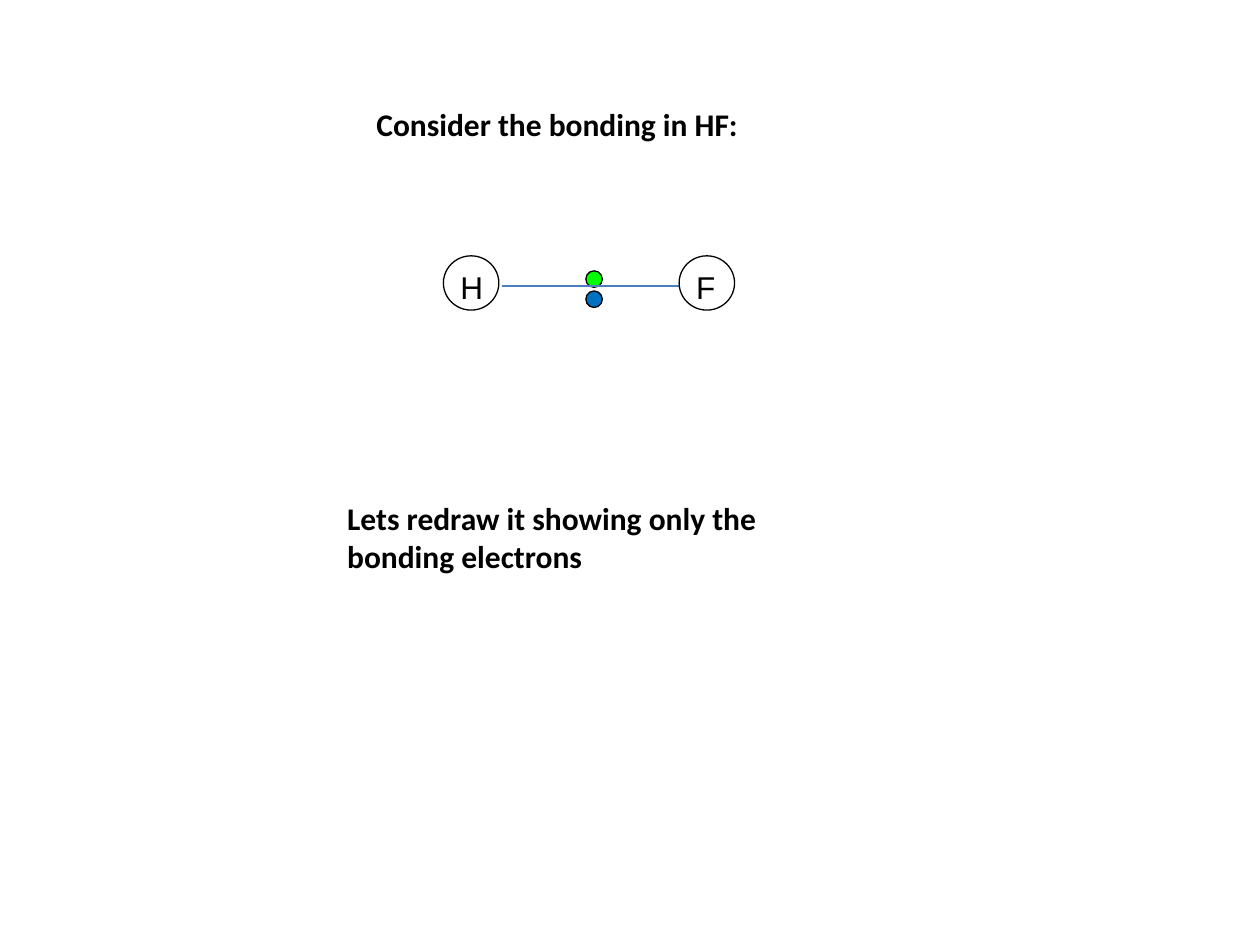
from lxml.etree import SubElement
from pptx import Presentation
from pptx.dml.color import RGBColor
from pptx.enum.shapes import MSO_CONNECTOR, MSO_SHAPE
from pptx.enum.text import MSO_ANCHOR
from pptx.oxml.ns import qn
from pptx.util import Pt

BLACK = RGBColor(0x00, 0x00, 0x00)
GREEN = RGBColor(0x00, 0xFF, 0x00)
BLUE = RGBColor(0x00, 0x70, 0xC0)
BOND = RGBColor(0x4B, 0x7E, 0xBC)


def add_text(shapes, text, x, y, w, h, font, bold=False):
    sp = shapes.add_textbox(Pt(x), Pt(y), Pt(w), Pt(h))
    tf = sp.text_frame
    tf.word_wrap = True
    tf.vertical_anchor = MSO_ANCHOR.TOP
    tf.text = text
    r = tf.paragraphs[0].runs[0]
    r.font.name = font
    r.font.size = Pt(18)
    r.font.bold = bold
    r.font.color.rgb = BLACK
    return sp


def add_circle(shapes, x, y, w, h, fill=None):
    sp = shapes.add_shape(MSO_SHAPE.OVAL, Pt(x), Pt(y), Pt(w), Pt(h))
    sp.shadow.inherit = False
    if fill is None:
        sp.fill.background()
    else:
        sp.fill.solid()
        sp.fill.fore_color.rgb = fill
    sp.line.color.rgb = BLACK
    sp.line.width = Pt(0.75)


def add_atom(shapes, symbol, x, y, w, h):
    """Outlined circle with the element symbol inside."""
    atom = shapes.add_group_shape().shapes
    label = add_text(atom, symbol, x + 4, y + 4.3, 28.8, 13.7, "Arial")
    tf = label.text_frame
    tf.margin_left = tf.margin_right = Pt(5.76)
    tf.margin_top = tf.margin_bottom = Pt(2.88)
    add_circle(atom, x, y, w, h)


def add_molecule(shapes, x, y, w, h):
    """Two atoms joined by a bond, with the shared electron pair."""
    atom_w, electron = 31.7, 9.4

    # Bonding electrons
    for i, color in enumerate((GREEN, BLUE)):
        add_circle(shapes, x + 81.4, y + 8.6 + i * 11.5, electron, electron, color)

    # Bond
    right = x + w - atom_w
    bond_y = Pt(y + 17.2)
    line = shapes.add_connector(
        MSO_CONNECTOR.STRAIGHT, Pt(x + atom_w + 1.5), bond_y, Pt(right), bond_y)
    line.line.color.rgb = BOND
    line.line.width = Pt(0.75)
    SubElement(line._element.spPr, qn("a:effectLst"))

    # Atoms
    for symbol, left in (("H", x), ("F", right)):
        add_atom(shapes, symbol, left, y, atom_w, h)


def main():
    prs = Presentation()
    prs.slide_width, prs.slide_height = Pt(720), Pt(540)
    s = prs.slides.add_slide(prs.slide_layouts[6])

    add_text(s.shapes, "Consider the bonding in HF:",
             208, 56.2, 275.8, 28.8, "Calibri", bold=True)
    add_molecule(s.shapes, 253.4, 146.2, 166.4, 31)
    add_text(s.shapes, "Lets redraw it showing only the bonding electrons",
             191.3, 281.5, 303.8, 51, "Calibri", bold=True)

    prs.save("out.pptx")


if __name__ == "__main__":
    main()
